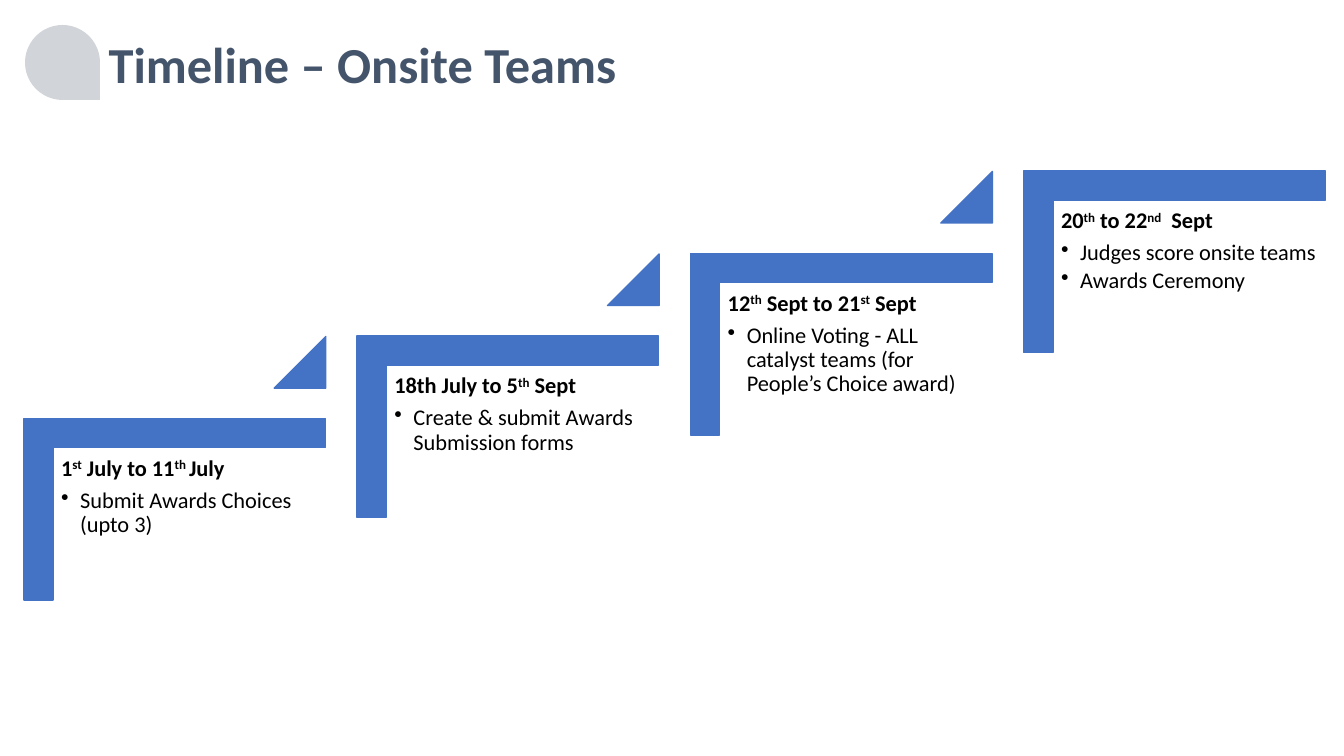
"""Build the onsite teams timeline slide as a rising staircase of steps."""
import pptx
import pptx.dml.color
import pptx.enum.shapes
import pptx.enum.text
import pptx.oxml.ns
import pptx.util
from lxml import etree

TITLE = "Timeline – Onsite Teams"
STEPS = [
    (("1", "st", " July to 11", "th ", "July"), ("Submit Awards Choices (upto 3)",)),
    (("18th July to 5", "th", " Sept"), ("Create & submit Awards Submission forms",)),
    (("12", "th", " Sept to 21", "st", " Sept"),
     ("Online Voting - ALL catalyst teams (for People’s Choice award)",)),
    (("20", "th", " to 22", "nd", "  Sept"),
     ("Judges score onsite teams", "Awards Ceremony")),
]

BLUE = pptx.dml.color.RGBColor(0x44, 0x72, 0xC4)
SLATE = pptx.dml.color.RGBColor(0x44, 0x54, 0x6A)
GREY = pptx.dml.color.RGBColor(0xD1, 0xD4, 0xD9)
BLACK = pptx.dml.color.RGBColor(0, 0, 0)
FONT = "Calibri"
SHAPES = pptx.enum.shapes.MSO_SHAPE
Cm = pptx.util.Cm

FIRST_LEFT, FIRST_TOP = Cm(0.6), Cm(10.55)
STEP_RIGHT, STEP_UP = Cm(8.4), Cm(2.08)
STEP_WIDTH, STEP_HEIGHT = Cm(7.6), Cm(4.57)
TRIANGLE_SIZE = Cm(1.3)
BULLET_INDENT = Cm(0.48)


def add_filled_shape(slide, kind, left, top, width, height, color, outlined=True):
    shape = slide.shapes.add_shape(kind, left, top, width, height)
    shape.shadow.inherit = False
    shape.fill.solid()
    shape.fill.fore_color.rgb = color
    if outlined:
        shape.line.color.rgb = color
        shape.line.width = pptx.util.Pt(1)
    else:
        shape.line.fill.background()
    return shape


def add_text_frame(slide, left, top, width, height, inset_x, inset_y):
    frame = slide.shapes.add_textbox(left, top, width, height).text_frame
    frame.word_wrap = True
    frame.vertical_anchor = pptx.enum.text.MSO_ANCHOR.TOP
    frame.margin_left = frame.margin_right = inset_x
    frame.margin_top = frame.margin_bottom = inset_y
    return frame


def style_paragraph(paragraph, size, color, bold, space_after=0):
    paragraph.line_spacing = 0.9
    paragraph.space_after = pptx.util.Pt(space_after)
    paragraph.font.name = FONT
    paragraph.font.size = pptx.util.Pt(size)
    paragraph.font.bold = bold
    paragraph.font.color.rgb = color


def add_bullet(paragraph):
    properties = paragraph._p.get_or_add_pPr()
    properties.set("marL", str(BULLET_INDENT))
    properties.set("indent", str(-BULLET_INDENT))
    bullet = etree.Element(pptx.oxml.ns.qn("a:buChar"), char="•")
    properties.find(pptx.oxml.ns.qn("a:spcAft")).addnext(bullet)


def add_step(slide, index, dates, tasks):
    left = FIRST_LEFT + index * STEP_RIGHT
    top = FIRST_TOP - index * STEP_UP
    turn = (STEP_WIDTH - STEP_HEIGHT) // 2
    corner = add_filled_shape(slide, SHAPES.CORNER, left + turn, top - turn,
                              STEP_HEIGHT, STEP_WIDTH, BLUE)
    corner.rotation = 90
    corner.adjustments[0] = corner.adjustments[1] = 0.16

    frame = add_text_frame(slide, left + Cm(0.75), top + Cm(0.78),
                           Cm(6.86), Cm(6.02), Cm(0.19), Cm(0.19))
    heading = frame.paragraphs[0]
    style_paragraph(heading, 16, BLACK, True, 5.6)
    for position, piece in enumerate(dates):
        run = heading.add_run()
        run.text = piece
        is_superscript = position % 2 == 1
        if is_superscript:
            run._r.get_or_add_rPr().set("baseline", "30000")
    for task in tasks:
        paragraph = frame.add_paragraph()
        paragraph.text = task
        style_paragraph(paragraph, 16, BLACK, False, 2.4)
        add_bullet(paragraph)

    if index < len(STEPS) - 1:
        triangle = add_filled_shape(slide, SHAPES.ISOSCELES_TRIANGLE,
                                    left + Cm(6.31), top - Cm(2.07),
                                    TRIANGLE_SIZE, TRIANGLE_SIZE, BLUE)
        triangle.adjustments[0] = 1


def main():
    presentation = pptx.Presentation()
    presentation.slide_width, presentation.slide_height = Cm(33.87), Cm(19.05)
    slide = presentation.slides.add_slide(presentation.slide_layouts[6])

    teardrop = add_filled_shape(slide, SHAPES.TEAR, Cm(0.63), Cm(0.63),
                                Cm(1.89), Cm(1.89), GREY, outlined=False)
    teardrop.rotation = 90

    frame = add_text_frame(slide, Cm(2.49), Cm(0.89), Cm(31.38), Cm(2.26),
                           Cm(0.25), Cm(0.13))
    title = frame.paragraphs[0]
    title.text = TITLE
    style_paragraph(title, 36, SLATE, True)

    for index, (dates, tasks) in enumerate(STEPS):
        add_step(slide, index, dates, tasks)

    presentation.save("out.pptx")


if __name__ == "__main__":
    main()
